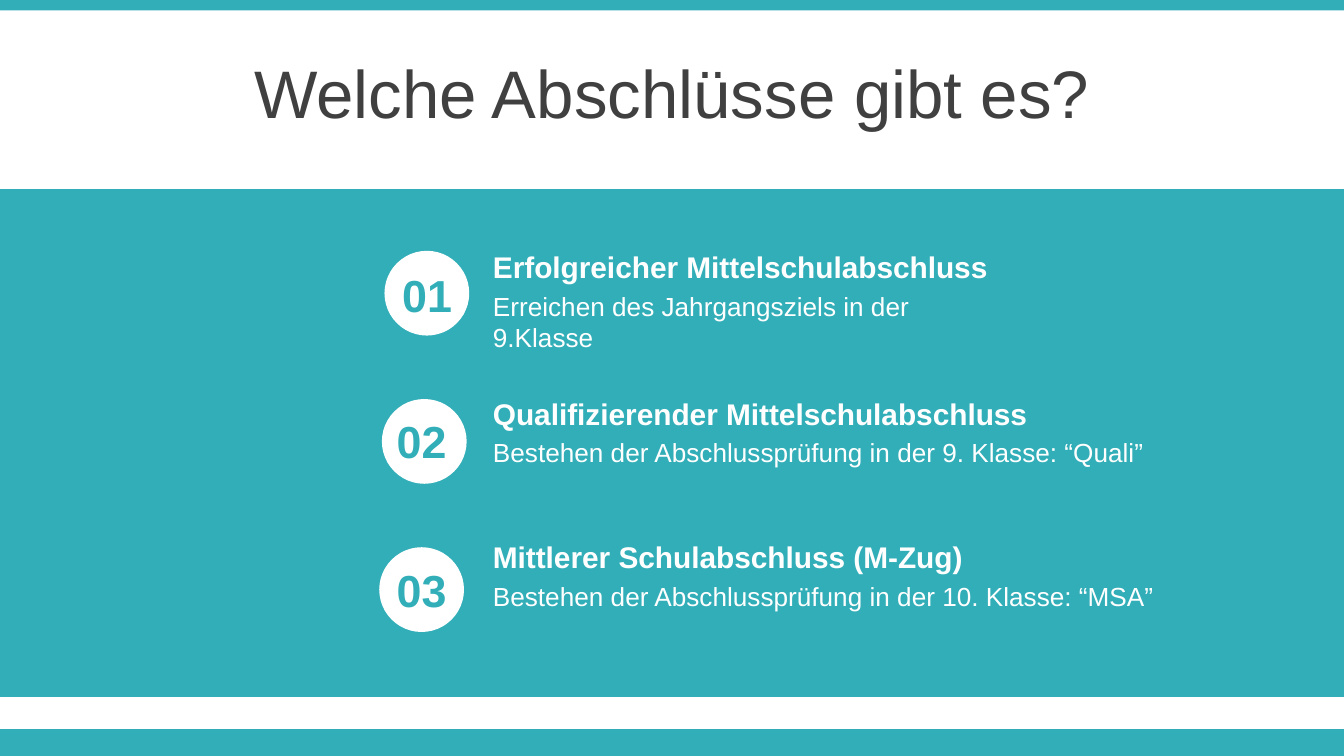
import dataclasses

import pptx
import pptx.dml.color
import pptx.enum.shapes
import pptx.enum.text
import pptx.util

Pt = pptx.util.Pt
RGB = pptx.dml.color.RGBColor
SHAPE = pptx.enum.shapes.MSO_SHAPE
ALIGN = pptx.enum.text.PP_ALIGN
ANCHOR = pptx.enum.text.MSO_ANCHOR


@dataclasses.dataclass(frozen=True)
class Theme:
    font: str = "Arial"
    teal: RGB = RGB(0x32, 0xAE, 0xB8)
    white: RGB = RGB(0xFF, 0xFF, 0xFF)
    dark: RGB = RGB(0x40, 0x40, 0x40)
    title_size: int = 36
    number_size: int = 24
    heading_size: int = 16
    detail_size: int = 14


theme = Theme()
WIDTH, HEIGHT = 720, 405

deck = pptx.Presentation()
deck.slide_width, deck.slide_height = Pt(WIDTH), Pt(HEIGHT)
slide = deck.slides.add_slide(deck.slide_layouts[6])


def add_text(text, *, left, top, width, height, size, color,
             bold=False, align=ALIGN.LEFT, anchor=ANCHOR.TOP):
    box = slide.shapes.add_textbox(Pt(left), Pt(top), Pt(width), Pt(height))
    frame = box.text_frame
    frame.word_wrap = True
    frame.vertical_anchor = anchor
    paragraph = frame.paragraphs[0]
    paragraph.alignment = align
    run = paragraph.add_run()
    run.text = text
    run.font.name = theme.font
    run.font.size = Pt(size)
    run.font.bold = bold
    run.font.color.rgb = color


def add_filled(kind, left, top, width, height, color):
    shape = slide.shapes.add_shape(kind, Pt(left), Pt(top), Pt(width), Pt(height))
    shape.shadow.inherit = False
    shape.fill.solid()
    shape.fill.fore_color.rgb = color
    shape.line.fill.background()


# Footer bar, header bar and content band
for top, height in [(390.6, 14.4), (0, 5.6), (101.4, 272)]:
    add_filled(SHAPE.RECTANGLE, 0, top, WIDTH, height, theme.teal)

# Title
add_text("Welche Abschlüsse gibt es?", left=0, top=11.5, width=WIDTH, height=75,
         size=theme.title_size, color=theme.dark,
         align=ALIGN.CENTER, anchor=ANCHOR.MIDDLE)

# Qualifications: heading, detail, text top, text width, number left, number top
qualifications = [
    ("Erfolgreicher Mittelschulabschluss",
     "Erreichen des Jahrgangsziels in der 9.Klasse", 129.6, 294.5, 203.6, 139.7),
    ("Qualifizierender Mittelschulabschluss",
     "Bestehen der Abschlussprüfung in der 9. Klasse: “Quali”",
     208.2, 395.3, 200.7, 218.2),
    ("Mittlerer Schulabschluss (M-Zug)",
     "Bestehen der Abschlussprüfung in der 10. Klasse: “MSA”",
     285.3, 412.6, 200.7, 298),
]
TEXT_LEFT, DETAIL_OFFSET = 257, 22.3
CIRCLE_LEFT, CIRCLE_TOP, CIRCLE_SIZE = 206, 134.4, 45.4
CIRCLE_SHIFT, CIRCLE_PITCH = -1.4, 79.4

for index, (heading, detail, top, width, number_left, number_top) in enumerate(qualifications):
    add_filled(SHAPE.OVAL, CIRCLE_LEFT + index * CIRCLE_SHIFT,
               CIRCLE_TOP + index * CIRCLE_PITCH,
               CIRCLE_SIZE, CIRCLE_SIZE, theme.white)
    add_text(detail, left=TEXT_LEFT, top=top + DETAIL_OFFSET, width=width, height=24.5,
             size=theme.detail_size, color=theme.white)
    add_text(heading, left=TEXT_LEFT, top=top, width=width, height=26.6,
             size=theme.heading_size, color=theme.white, bold=True)
    add_text(f"{index + 1:02}", left=number_left, top=number_top, width=50.4, height=36,
             size=theme.number_size, color=theme.teal, bold=True, align=ALIGN.CENTER)

deck.save("out.pptx")
